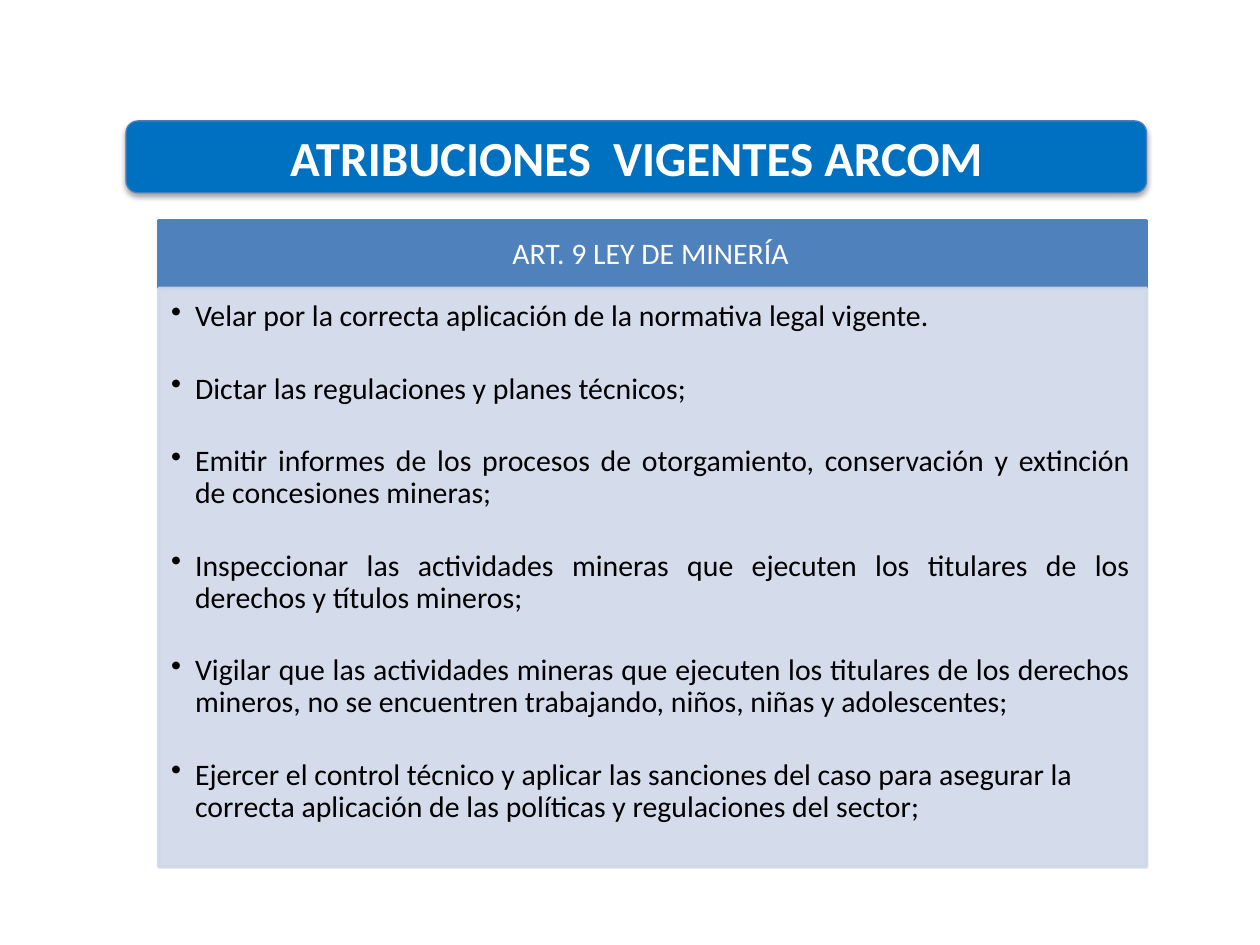
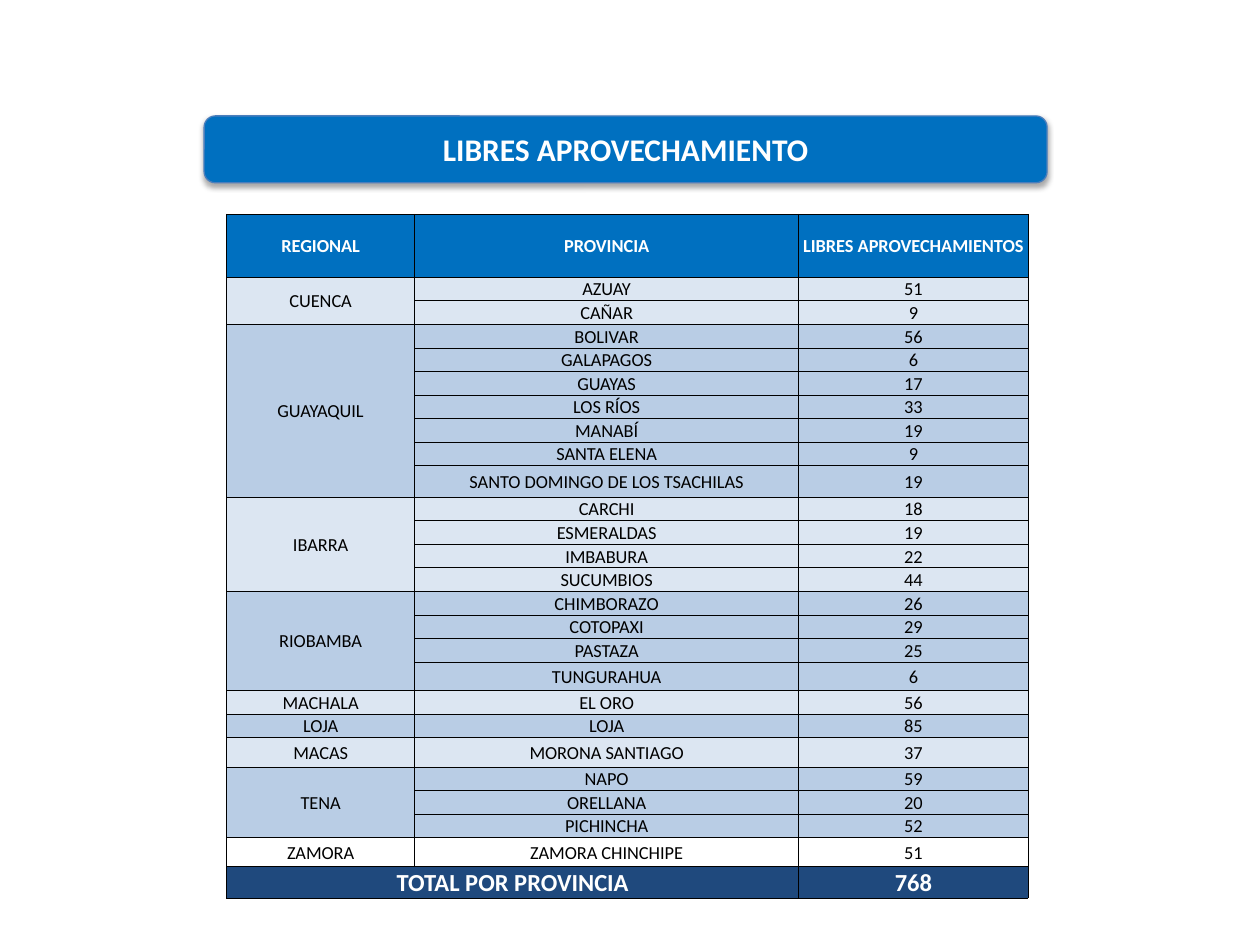
import pptx
import pptx.util
import pptx.dml.color
import pptx.enum.shapes
import pptx.enum.text
import pptx.oxml
import pptx.oxml.ns

Pt = pptx.util.Pt
RGBColor = pptx.dml.color.RGBColor
Align = pptx.enum.text.PP_ALIGN
Anchor = pptx.enum.text.MSO_ANCHOR
Shape = pptx.enum.shapes.MSO_SHAPE

BLUE = RGBColor(0x00, 0x70, 0xC0)
EDGE = RGBColor(0x4B, 0x7E, 0xBC)
STEEL = RGBColor(0x4F, 0x81, 0xBD)
MIST = RGBColor(0xD0, 0xD8, 0xE8)
PALE = RGBColor(0xDC, 0xE6, 0xF2)
SKY = RGBColor(0xB9, 0xCD, 0xE5)
NAVY = RGBColor(0x1F, 0x49, 0x7D)
WHITE = RGBColor(0xFF, 0xFF, 0xFF)
BLACK = RGBColor(0x00, 0x00, 0x00)
FONT = "Calibri"
NS = pptx.oxml.ns.nsdecls("a")
SHADOW = (f'<a:effectLst {NS}><a:outerShdw blurRad="40000" dist="23000" dir="5400000" '
          'rotWithShape="0"><a:srgbClr val="000000"><a:alpha val="35000"/></a:srgbClr>'
          '</a:outerShdw></a:effectLst>')

deck = pptx.Presentation()
deck.slide_width = pptx.util.Inches(10)
deck.slide_height = pptx.util.Inches(7.5)
COL = deck.slide_width / 100
ROW = deck.slide_height / 100


def place(left, top, width, height):
    """Turn hundredths of the slide's width and height into lengths."""
    return [int(n * unit) for n, unit in zip((left, top, width, height), (COL, ROW) * 2)]


def add_page(words, size, box):
    """Add a slide whose title sits on a rounded blue band."""
    page = deck.slides.add_slide(deck.slide_layouts[5])
    band = page.shapes.add_shape(Shape.ROUNDED_RECTANGLE, *box)
    band.fill.solid()
    band.fill.fore_color.rgb = BLUE
    band.line.color.rgb = EDGE
    band.line.width = Pt(0.75)
    band._element.spPr.append(pptx.oxml.parse_xml(SHADOW))
    title = page.shapes.title
    title.left, title.top, title.width, title.height = box
    # Bring the title in front of its band
    band._element.addnext(title._element)
    frame = title.text_frame
    frame.text = words
    frame.auto_size = pptx.enum.text.MSO_AUTO_SIZE.NONE
    frame.vertical_anchor = Anchor.MIDDLE
    line = frame.paragraphs[0]
    line.alignment = Align.CENTER
    line.font.name, line.font.size, line.font.bold = FONT, Pt(size), True
    line.font.color.rgb = WHITE
    return page


# Slide 1: duties under the mining law
duties = [
    "Velar por la correcta aplicación de la normativa legal vigente.",
    "Dictar las regulaciones y planes técnicos;",
    "Emitir informes de los procesos de otorgamiento, conservación y extinción "
    "de concesiones mineras;",
    "Inspeccionar las actividades mineras que ejecuten los titulares de los "
    "derechos y títulos mineros;",
    "Vigilar que las actividades mineras que ejecuten los titulares de los derechos "
    "mineros, no se encuentren trabajando, niños, niñas y adolescentes;",
    "Ejercer el control técnico y aplicar las sanciones del caso para asegurar la "
    "correcta aplicación de las políticas y regulaciones del sector;",
]
page = add_page("ATRIBUCIONES  VIGENTES ARCOM", 28, place(10, 12.8, 81, 7.6))
parts = [
    (23.33, 7.2, STEEL, WHITE, ["ART. 9 LEY DE MINERÍA"]),
    (30.53, 61.2, MIST, BLACK, duties),
]
for top, height, tint, ink, lines in parts:
    panel = page.shapes.add_shape(Shape.RECTANGLE, *place(12.6, top, 78.4, height))
    panel.shadow.inherit = False
    panel.fill.solid()
    panel.fill.fore_color.rgb = panel.line.color.rgb = tint
    panel.line.width = Pt(2)
    frame = panel.text_frame
    frame.word_wrap = True
    frame.margin_right = int(1.3 * COL)
    listed = lines is duties
    if listed:
        for paint in panel._element.spPr.iter(pptx.oxml.ns.qn("a:srgbClr")):
            paint.append(pptx.oxml.parse_xml(f'<a:alpha {NS} val="90000"/>'))
        frame.margin_left = frame.margin_top = int(COL)
        frame.margin_bottom = int(1.5 * COL)
    frame.vertical_anchor = Anchor.TOP if listed else Anchor.MIDDLE
    for i, words in enumerate(lines):
        line = frame.paragraphs[0] if i == 0 else frame.add_paragraph()
        line.text = words
        line.alignment = Align.CENTER
        if listed:
            props = line._p.get_or_add_pPr()
            props.set("marL", str(int(1.9 * COL)))
            props.set("indent", str(int(-1.9 * COL)))
            props.append(pptx.oxml.parse_xml(f'<a:buChar {NS} char="•"/>'))
            last = i == len(lines) - 1
            line.alignment = Align.LEFT if last else Align.JUSTIFY
            line.space_after = Pt(0 if last else 23)
        line.line_spacing = 0.9
        line.font.name, line.font.size = FONT, Pt(17)
        line.font.color.rgb = ink

# Slide 2: free-use permits by region and province
zones = [
    ("CUENCA", PALE, [("AZUAY", 51), ("CAÑAR", 9)]),
    ("GUAYAQUIL", SKY, [("BOLIVAR", 56), ("GALAPAGOS", 6), ("GUAYAS", 17),
                        ("LOS RÍOS", 33), ("MANABÍ", 19), ("SANTA ELENA", 9),
                        ("SANTO DOMINGO DE LOS TSACHILAS", 19)]),
    ("IBARRA", PALE, [("CARCHI", 18), ("ESMERALDAS", 19), ("IMBABURA", 22),
                      ("SUCUMBIOS", 44)]),
    ("RIOBAMBA", SKY, [("CHIMBORAZO", 26), ("COTOPAXI", 29), ("PASTAZA", 25),
                       ("TUNGURAHUA", 6)]),
    ("MACHALA", PALE, [("EL ORO", 56)]),
    ("LOJA", SKY, [("LOJA", 85)]),
    ("MACAS", PALE, [("MORONA SANTIAGO", 37)]),
    ("TENA", SKY, [("NAPO", 59), ("ORELLANA", 20), ("PICHINCHA", 52)]),
    ("ZAMORA", None, [("ZAMORA CHINCHIPE", 51)]),
]
rows = [(BLUE, ("REGIONAL", "PROVINCIA", "LIBRES APROVECHAMIENTOS"))]
spans = []
for zone, tint, towns in zones:
    spans.append((len(rows), len(towns)))
    for i, (town, count) in enumerate(towns):
        rows.append((tint, (zone if i == 0 else "", town, str(count))))
rows.append((NAVY, ("TOTAL POR PROVINCIA", "", "768")))
last = len(rows) - 1
tall = {0: 6.67, 9: 3.33, 17: 3.0, 20: 3.13, 24: 3.07, last: 3.27}

page = add_page("LIBRES APROVECHAMIENTO", 18, place(16.2, 12.27, 66.9, 7.07))
grid = page.shapes.add_table(len(rows), 3, *place(18, 22.67, 63.6, 71)).table
for column, width in zip(grid.columns, (14.9, 30.5, 18.2)):
    column.width = int(width * COL)
for r, (tint, texts) in enumerate(rows):
    grid.rows[r].height = int(tall.get(r, 2.44) * ROW)
    strong = r in (0, last)
    for c, words in enumerate(texts):
        cell = grid.cell(r, c)
        cell.margin_left = cell.margin_right = cell.margin_top = int(0.1 * COL)
        cell.margin_bottom = 0
        cell.vertical_anchor = Anchor.MIDDLE
        cell.text = words
        line = cell.text_frame.paragraphs[0]
        line.alignment = Align.CENTER
        line.font.name, line.font.bold = FONT, strong
        line.font.size = Pt(14 if r == last else 10.5)
        line.font.color.rgb = WHITE if strong else BLACK
        props = cell._tc.get_or_add_tcPr()
        for side in ("lnL", "lnR", "lnT", "lnB"):
            props.append(pptx.oxml.parse_xml(
                f'<a:{side} {NS} w="6350"><a:solidFill><a:srgbClr val="{BLACK}"/>'
                f'</a:solidFill></a:{side}>'))
        if tint is None:
            cell.fill.background()
        else:
            cell.fill.solid()
            cell.fill.fore_color.rgb = tint
for start, count in spans:
    if count > 1:
        grid.cell(start, 0).merge(grid.cell(start + count - 1, 0))
grid.cell(last, 0).merge(grid.cell(last, 1))

deck.save("out.pptx")
